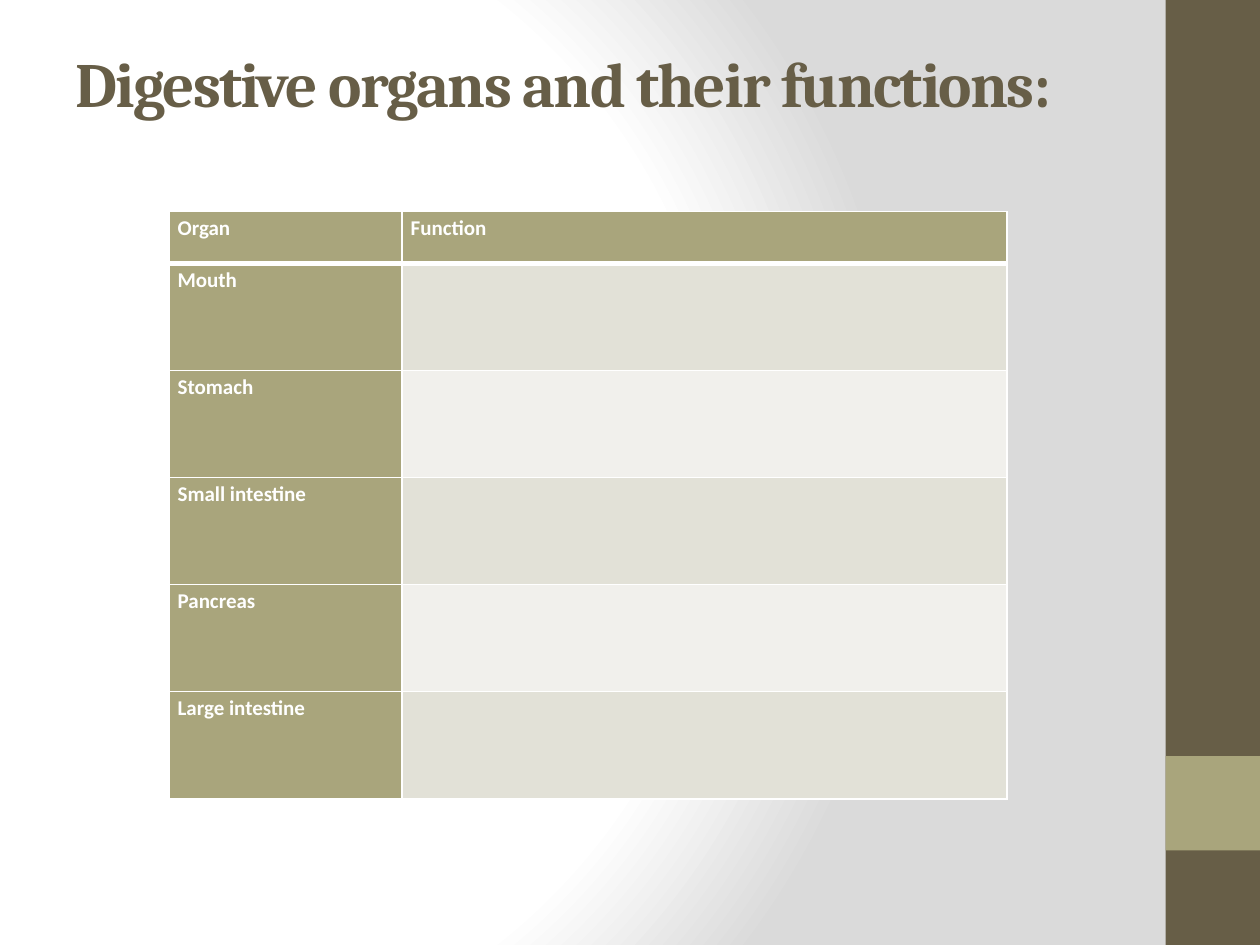
from pptx import Presentation
from pptx.dml.color import RGBColor
from pptx.enum.shapes import MSO_SHAPE as Shape
from pptx.enum.text import MSO_ANCHOR as Anchor
from pptx.oxml import parse_xml
from pptx.oxml.ns import nsdecls
from pptx.util import Inches, Pt

WHITE = RGBColor(0xFF, 0xFF, 0xFF)
GREY = RGBColor(0xDA, 0xDA, 0xDA)
BROWN = RGBColor(0x67, 0x5E, 0x47)
OLIVE = RGBColor(0xA9, 0xA5, 0x7C)
BANDS = (RGBColor(0xE2, 0xE1, 0xD7), RGBColor(0xF1, 0xF0, 0xEC))

ORGANS = ("Mouth", "Stomach", "Small intestine", "Pancreas", "Large intestine")
COLUMN_WIDTHS = (1.85, 4.8)
HEADER_HEIGHT = 0.41
ROW_HEIGHT = 0.85


def set_background(page):
    stops = "".join(
        f'<a:gs pos="{position * 1000}"><a:srgbClr val="{color}"/></a:gs>'
        for position, color in ((0, WHITE), (75, WHITE), (100, GREY))
    )
    background = parse_xml(
        f'<p:bg {nsdecls("p", "a")}><p:bgPr><a:gradFill rotWithShape="1">'
        f'<a:gsLst>{stops}</a:gsLst><a:path path="circle">'
        '<a:fillToRect l="20000" t="50000" r="100000" b="50000"/></a:path>'
        "</a:gradFill><a:effectLst/></p:bgPr></p:bg>"
    )
    page.element.cSld.insert(0, background)


def add_block(page, top, height, color):
    block = page.shapes.add_shape(
        Shape.RECTANGLE, Inches(9.25), Inches(top), Inches(0.75), Inches(height)
    )
    block.shadow.inherit = False
    block.fill.solid()
    block.fill.fore_color.rgb = color
    block.line.fill.background()


def format_span(span, font, size, color):
    span.font.name = font
    span.font.size = Pt(size)
    span.font.bold = True
    span.font.color.rgb = color


def add_title(page, text):
    box = page.shapes.add_textbox(Inches(0.5), Inches(0.3), Inches(8.33), Inches(1.25))
    frame = box.text_frame
    frame.word_wrap = True
    frame.vertical_anchor = Anchor.TOP
    frame.text = text
    span = frame.paragraphs[0].runs[0]
    format_span(span, "Cambria", 36, BROWN)
    span.font._element.set("spc", "-100")


def set_border(cell, side, width):
    cell._tc.get_or_add_tcPr().append(parse_xml(
        f'<a:ln{side} {nsdecls("a")} w="{Pt(width)}"><a:solidFill>'
        f'<a:srgbClr val="{WHITE}"/></a:solidFill></a:ln{side}>'
    ))


def format_cell(cell, color, top_width, bottom_width):
    cell.margin_left = cell.margin_right = Inches(0.07)
    cell.margin_top = cell.margin_bottom = 0
    for side, width in zip("LRTB", (1, 1, top_width, bottom_width)):
        set_border(cell, side, width)
    cell.fill.solid()
    cell.fill.fore_color.rgb = color


def write_label(cell, text):
    cell.text = text
    para = cell.text_frame.paragraphs[0]
    para.line_spacing = 1.15
    format_span(para.runs[0], "Calibri", 12, WHITE)


def add_organ_table(page):
    heights = [HEADER_HEIGHT] + [ROW_HEIGHT] * len(ORGANS)
    table = page.shapes.add_table(
        len(heights), len(COLUMN_WIDTHS), Inches(1.34), Inches(1.68),
        Inches(sum(COLUMN_WIDTHS)), Inches(sum(heights)),
    ).table
    for column, width in zip(table.columns, COLUMN_WIDTHS):
        column.width = Inches(width)
    for index, height in enumerate(heights):
        table.rows[index].height = Inches(height)
        band = OLIVE if index == 0 else BANDS[(index - 1) % 2]
        top_width = 3 if index == 1 else 1
        bottom_width = 3 if index == 0 else 1
        for column, color in enumerate((OLIVE, band)):
            format_cell(table.cell(index, column), color, top_width, bottom_width)
    for index, label in enumerate(("Organ",) + ORGANS):
        write_label(table.cell(index, 0), label)
    write_label(table.cell(0, 1), "Function")


def main():
    deck = Presentation()
    deck.slide_width = Inches(10)
    deck.slide_height = Inches(7.5)
    page = deck.slides.add_slide(deck.slide_layouts[6])
    set_background(page)
    add_block(page, 0, 7.5, BROWN)
    add_block(page, 6, 0.75, OLIVE)
    add_title(page, "Digestive organs and their functions:")
    add_organ_table(page)
    deck.save("out.pptx")


if __name__ == "__main__":
    main()
